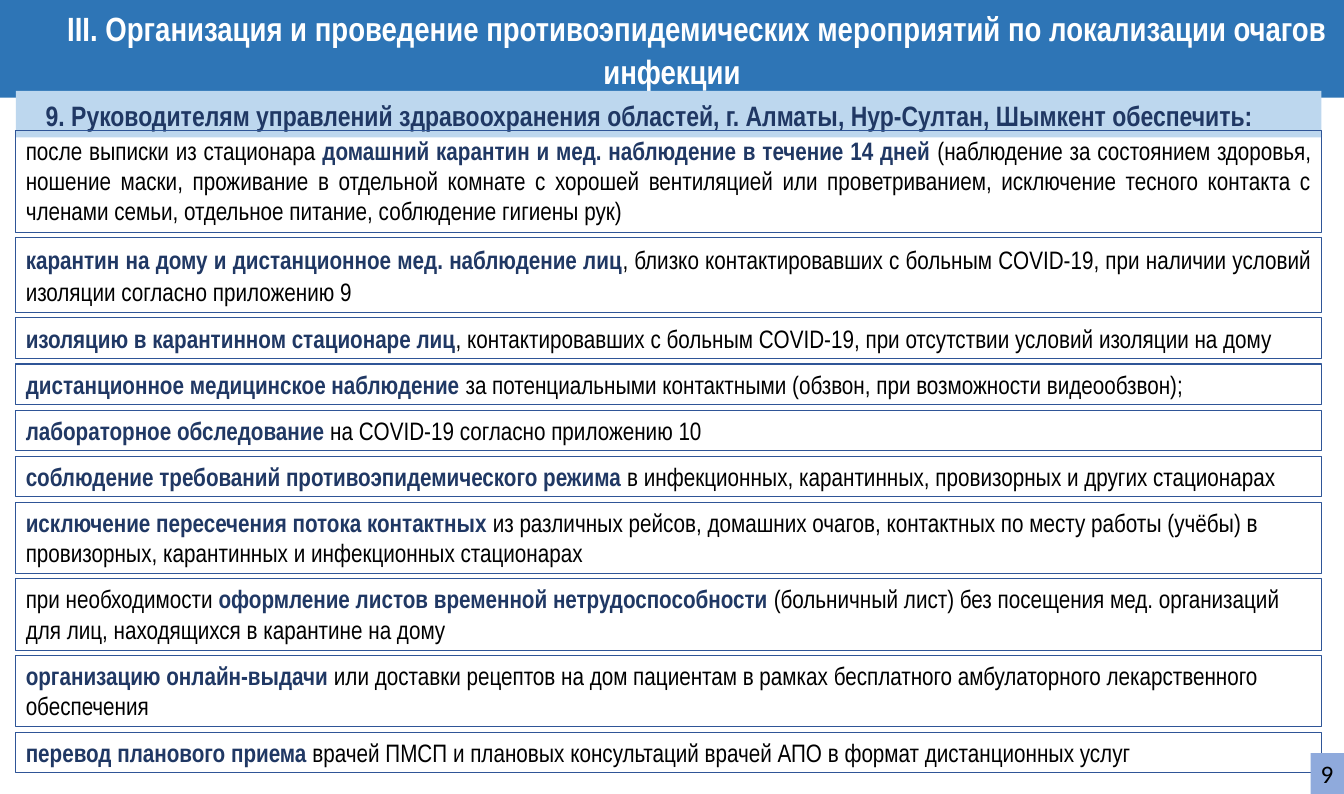
from dataclasses import dataclass

from pptx import Presentation
from pptx.dml.color import RGBColor
from pptx.enum.text import MSO_ANCHOR, MSO_AUTO_SIZE, PP_ALIGN
from pptx.util import Cm, Pt

HEADING = "ІІІ. Организация и проведение противоэпидемических мероприятий по локализации очагов инфекции"
ADDRESSEES = "9. Руководителям управлений здравоохранения областей, г. Алматы, Нур-Султан, Шымкент обеспечить:"
PAGE_NUMBER = "9"

MEASURES = [
    {"height": 2.57, "justified": True, "spacing": 1.0, "text": (
        "после выписки из стационара ",
        "домашний карантин и мед. наблюдение в течение 14 дней ",
        "(наблюдение за состоянием здоровья, ношение маски, проживание в отдельной комнате "
        "с хорошей вентиляцией или проветриванием, исключение тесного контакта с членами семьи, "
        "отдельное питание, соблюдение гигиены рук)")},
    {"height": 1.9, "justified": True, "spacing": 1.07, "text": (
        "", "карантин на дому и дистанционное мед. наблюдение лиц",
        ", близко контактировавших с больным COVID-19, при наличии условий изоляции "
        "согласно приложению 9")},
    {"height": 1.03, "text": (
        "", "изоляцию в карантинном стационаре лиц",
        ", контактировавших с больным COVID-19, при отсутствии условий изоляции на дому")},
    {"height": 1.03, "text": (
        "", "дистанционное медицинское наблюдение ",
        "за потенциальными контактными (обзвон, при возможности видеообзвон);")},
    {"height": 1.03, "text": (
        "", "лабораторное обследование ", "на COVID-19 согласно приложению 10")},
    {"height": 1.03, "text": (
        "", "соблюдение требований противоэпидемического режима ",
        "в инфекционных, карантинных, провизорных и других стационарах")},
    {"height": 1.8, "text": (
        "", "исключение пересечения потока контактных ",
        "из различных рейсов, домашних очагов, контактных по месту работы (учёбы) "
        "в провизорных, карантинных и инфекционных стационарах")},
    {"height": 1.8, "text": (
        "при необходимости ", "оформление листов временной нетрудоспособности ",
        "(больничный лист) без посещения мед. организаций для лиц, находящихся в карантине на дому")},
    {"height": 1.8, "text": (
        "", "организацию онлайн-выдачи ",
        "или доставки рецептов на дом пациентам в рамках бесплатного амбулаторного "
        "лекарственного обеспечения")},
    {"height": 1.03, "text": (
        "", "перевод планового приема ",
        "врачей ПМСП и плановых консультаций врачей АПО в формат дистанционных услуг")},
]


@dataclass(frozen=True)
class Theme:
    banner: RGBColor = RGBColor(0x2E, 0x75, 0xB6)
    strip: RGBColor = RGBColor(0xBD, 0xD7, 0xEE)
    badge: RGBColor = RGBColor(0x8F, 0xAA, 0xDC)
    border: RGBColor = RGBColor(0x2F, 0x55, 0x97)
    accent: RGBColor = RGBColor(0x20, 0x38, 0x64)
    ink: RGBColor = RGBColor(0, 0, 0)
    paper: RGBColor = RGBColor(0xFF, 0xFF, 0xFF)
    font: str = "Arial Narrow"
    number_font: str = "Calibri"
    heading_size: Pt = Pt(24)
    strip_size: Pt = Pt(20)
    text_size: Pt = Pt(18)


THEME = Theme()
SLIDE_WIDTH, SLIDE_HEIGHT = Cm(33.86), Cm(20)
LEFT, WIDTH = Cm(0.4), Cm(32.89)
MEASURES_TOP, GAP = Cm(3.28), Cm(0.13)


def place(box, left, top, width, height, fill=None):
    box.left, box.top, box.width, box.height = left, top, width, height
    if fill is not None:
        box.fill.solid()
        box.fill.fore_color.rgb = fill


def write(box, parts, size, align=PP_ALIGN.LEFT, spacing=1.0, indent=0,
          font=THEME.font, wrap=True):
    frame = box.text_frame
    frame.word_wrap = wrap
    frame.auto_size = MSO_AUTO_SIZE.SHAPE_TO_FIT_TEXT
    frame.vertical_anchor = MSO_ANCHOR.TOP
    paragraph = frame.paragraphs[0]
    paragraph.alignment = align
    paragraph.line_spacing = spacing
    if indent:
        paragraph._p.get_or_add_pPr().set("indent", str(indent))
    for wording, color, bold in parts:
        if wording:
            run = paragraph.add_run()
            run.text = wording
            run.font.name, run.font.size = font, size
            run.font.bold, run.font.color.rgb = bold, color


def add_box(slide, left, top, width, height, fill=None):
    box = slide.shapes.add_textbox(left, top, width, height)
    place(box, left, top, width, height, fill)
    return box


def main():
    deck = Presentation()
    deck.slide_width, deck.slide_height = SLIDE_WIDTH, SLIDE_HEIGHT
    slide = deck.slides.add_slide(deck.slide_layouts[5])

    heading = slide.shapes.title
    place(heading, 0, 0, SLIDE_WIDTH, Cm(2.46), THEME.banner)
    write(heading, [(HEADING, THEME.paper, True)], THEME.heading_size,
          PP_ALIGN.CENTER, 1.07, Cm(1.25))

    addressees = add_box(slide, LEFT, Cm(2.29), WIDTH, Cm(1.17), THEME.strip)
    write(addressees, [(ADDRESSEES, THEME.accent, True)], THEME.strip_size,
          PP_ALIGN.JUSTIFY, 1.07, Cm(0.5))

    top = MEASURES_TOP
    for measure in MEASURES:
        height = Cm(measure["height"])
        box = add_box(slide, LEFT, top, WIDTH, height)
        box.line.color.rgb = THEME.border
        box.line.width = Pt(0.75)
        before, key, after = measure["text"]
        align = PP_ALIGN.JUSTIFY if measure.get("justified") else PP_ALIGN.LEFT
        write(box, [(before, THEME.ink, False), (key, THEME.accent, True),
                    (after, THEME.ink, False)],
              THEME.text_size, align, measure.get("spacing", 1.0))
        top += height + GAP

    badge_width, badge_height = Cm(0.84), Cm(1.03)
    page_number = add_box(slide, SLIDE_WIDTH - badge_width, SLIDE_HEIGHT - badge_height,
                          badge_width, badge_height, THEME.badge)
    write(page_number, [(PAGE_NUMBER, THEME.ink, False)], THEME.text_size,
          font=THEME.number_font, wrap=False)

    deck.save("out.pptx")


if __name__ == "__main__":
    main()
